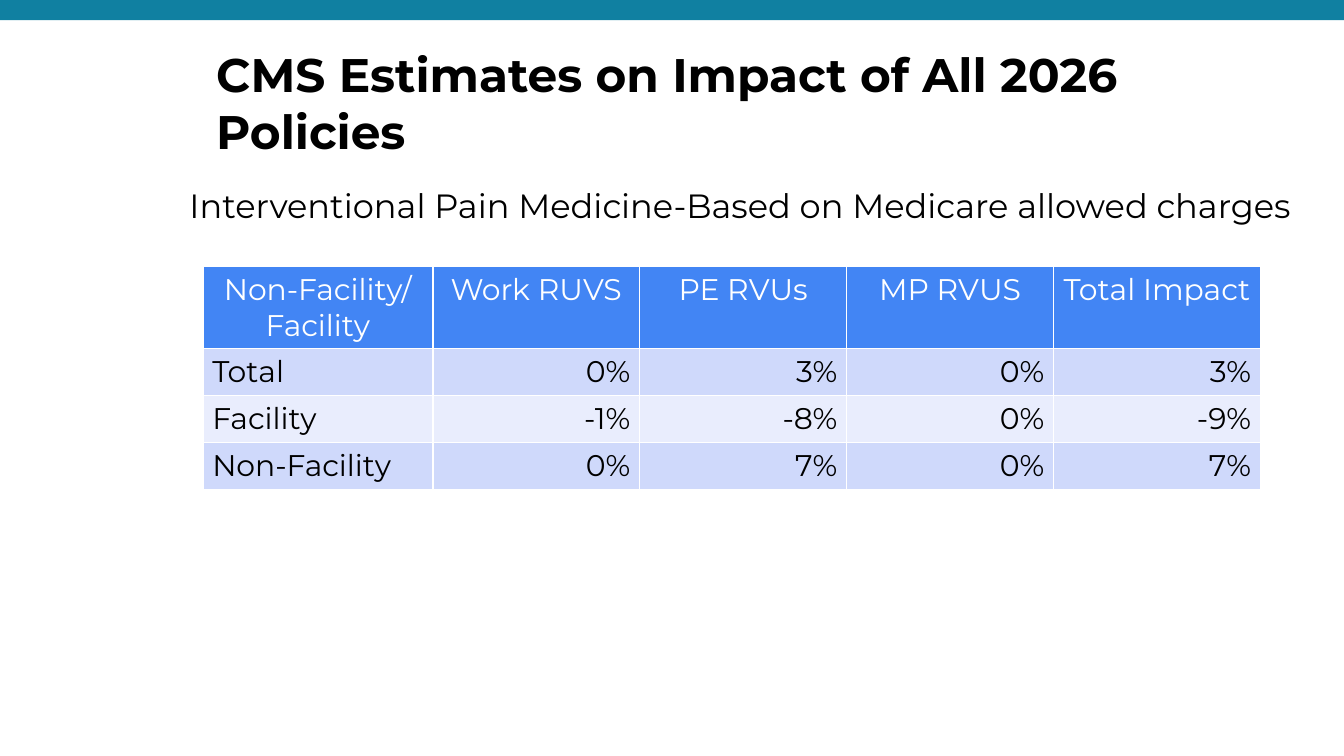
import pptx
import pptx.dml.color
import pptx.enum.shapes
import pptx.enum.text
import pptx.oxml.ns
import pptx.util
from lxml import etree

Inches = pptx.util.Inches
RGBColor = pptx.dml.color.RGBColor
Align = pptx.enum.text.PP_ALIGN

FONT = "Montserrat"
TEAL = RGBColor(0x10, 0x80, 0xA1)
BLUE = RGBColor(0x42, 0x85, 0xF4)
BAND_DARK = RGBColor(0xCF, 0xD9, 0xFB)
BAND_LIGHT = RGBColor(0xE9, 0xED, 0xFD)
BLACK = RGBColor(0, 0, 0)
WHITE = RGBColor(0xFF, 0xFF, 0xFF)

HEADERS = ["Non-Facility/\nFacility", "Work RUVS", "PE RVUs", "MP RVUS", "Total Impact"]
IMPACTS = [
    ["Total", "0%", "3%", "0%", "3%"],
    ["Facility", "-1%", "-8%", "0%", "-9%"],
    ["Non-Facility", "0%", "7%", "0%", "7%"],
]
COLUMN_WIDTHS = [1.71] + [1.54] * 4
ROW_HEIGHTS = [0.61] + [0.35] * len(IMPACTS)


def add_run(paragraph, text, size, color, bold=False):
    run = paragraph.add_run()
    run.text = text
    run.font.name = FONT
    run.font.size = pptx.util.Pt(size)
    run.font.bold = bold
    run.font.color.rgb = color


def add_text(slide, text, bounds, size, bold=False, margin_left=0.1, margin_top=0.1):
    box = slide.shapes.add_textbox(*[Inches(length) for length in bounds])
    frame = box.text_frame
    frame.word_wrap = True
    frame.margin_left = Inches(margin_left)
    frame.margin_top = Inches(margin_top)
    frame.margin_right = frame.margin_bottom = Inches(0.1)
    add_run(frame.paragraphs[0], text, size, BLACK, bold)


def add_top_band(slide):
    band = slide.shapes.add_shape(
        pptx.enum.shapes.MSO_SHAPE.RECTANGLE,
        Inches(0), Inches(-0.02), Inches(10), Inches(0.17))
    band.shadow.inherit = False
    band.fill.solid()
    band.fill.fore_color.rgb = TEAL
    band.line.fill.background()


def set_borders(cell, color, points):
    properties = cell._tc.get_or_add_tcPr()
    qn = pptx.oxml.ns.qn
    # Borders come before the fill in the cell properties
    for position, side in enumerate(["lnL", "lnR", "lnT", "lnB"]):
        line = etree.Element(qn("a:" + side), w=str(int(pptx.util.Pt(points))))
        fill = etree.SubElement(line, qn("a:solidFill"))
        etree.SubElement(fill, qn("a:srgbClr"), val=str(color))
        properties.insert(position, line)


def fill_cell(cell, text, fill, color, alignment):
    cell.margin_left = cell.margin_right = Inches(0.07)
    cell.margin_top = cell.margin_bottom = Inches(0.04)
    cell.fill.solid()
    cell.fill.fore_color.rgb = fill
    set_borders(cell, WHITE, 1)
    frame = cell.text_frame
    for index, line in enumerate(text.split("\n")):
        paragraph = frame.add_paragraph() if index else frame.paragraphs[0]
        paragraph.alignment = alignment
        add_run(paragraph, line, 16, color)


def add_impact_table(slide):
    rows = [HEADERS] + IMPACTS
    table = slide.shapes.add_table(
        len(rows), len(HEADERS), Inches(1.51), Inches(1.98),
        Inches(sum(COLUMN_WIDTHS)), Inches(sum(ROW_HEIGHTS))).table
    for column, width in zip(table.columns, COLUMN_WIDTHS):
        column.width = Inches(width)
    for row, height in zip(table.rows, ROW_HEIGHTS):
        row.height = Inches(height)

    for row_index, values in enumerate(rows):
        for column_index, text in enumerate(values):
            cell = table.cell(row_index, column_index)
            if row_index == 0:
                fill_cell(cell, text, BLUE, WHITE, Align.CENTER)
            else:
                band = BAND_DARK if row_index % 2 else BAND_LIGHT
                alignment = Align.RIGHT if column_index else Align.LEFT
                fill_cell(cell, text, band, BLACK, alignment)


def main():
    # Widescreen slide, 16:9
    presentation = pptx.Presentation()
    presentation.slide_width = Inches(10)
    presentation.slide_height = Inches(10 * 9 / 16)
    slide = presentation.slides.add_slide(presentation.slide_layouts[6])

    # Band, title and subtitle
    add_top_band(slide)
    add_text(slide, "CMS Estimates on Impact of All 2026 Policies",
             (1.51, 0.24, 8.4, 0.63), 25.2, bold=True)
    add_text(slide, "Interventional Pain Medicine-Based on Medicare allowed charges",
             (1.18, 1.01, 8.73, 3.74), 18, margin_left=0.23, margin_top=0.53)

    # Impact by setting
    add_impact_table(slide)

    presentation.save("out.pptx")


if __name__ == "__main__":
    main()
